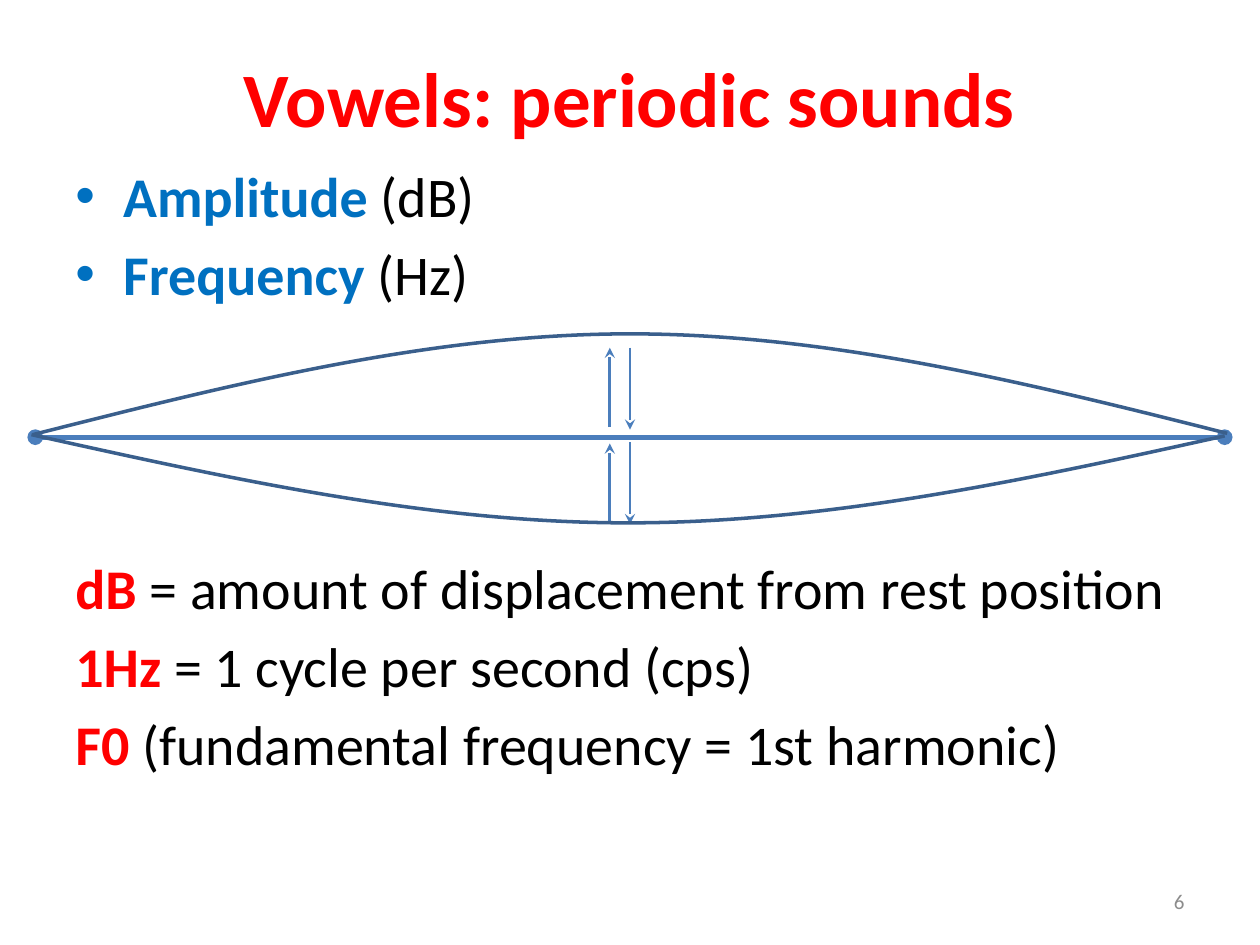
"""Build the slide on vowels as periodic sounds, with a vibrating string diagram."""
from lxml import etree
from pptx import Presentation, util as u
from pptx.dml.color import RGBColor
from pptx.enum import shapes, text
from pptx.oxml.ns import qn

RED, BLUE, BLACK, GREY = "FF0000", "0070C0", "000000", "8C8C8C"
STRING, CURVE = "4B7EBC", "3A5F8C"
TITLE = "Vowels: periodic sounds"
MEASURES = [("Amplitude ", "(dB)"), ("Frequency ", "(Hz)")]
DEFINITIONS = [
    ("dB", " = amount of displacement from rest position"),
    ("1Hz", " = 1 cycle per second (cps)"),
    ("F0 ", "(fundamental frequency = 1st harmonic)"),
]
REST = (0.28, 3.47, 9.72, 3.47)
ARROWS = [
    (4.84, 3.39, 4.84, 2.76),
    (5, 2.76, 5, 3.41),
    (4.84, 4.15, 4.84, 3.52),
    (5, 3.51, 5, 4.16),
]
CURVES = [
    (0.26, 9.74, [3.45, 3.05, 2.65, 2.65, 2.65, 3.04, 3.44]),
    (0.25, 9.72, [3.45, 3.8, 4.15, 4.15, 4.15, 3.81, 3.46]),
]


def rgb(color):
    return RGBColor.from_string(color)


def style(r, size, color, bold=False):
    r.font.name, r.font.size, r.font.bold = "Calibri", u.Pt(size), bold
    r.font.color.rgb = rgb(color)


def add_box(s, left, top, width, height):
    tf = s.shapes.add_textbox(*map(u.Inches, (left, top, width, height))).text_frame
    tf.word_wrap = True
    return tf


def add_terms(s, top, height, rows, color, bullet=False):
    tf = add_box(s, 0.5, top, 9, height)
    for i, (term, rest) in enumerate(rows):
        p = tf.add_paragraph() if i else tf.paragraphs[0]
        p.space_before = u.Pt(6.4)
        for words, c, bold in ((term, color, True), (rest, BLACK, False)):
            r = p.add_run()
            r.text = words
            style(r, 32, c, bold)
        if bullet:
            pPr = p._p.get_or_add_pPr()
            pPr.set("marL", str(u.Inches(0.38)))
            pPr.set("indent", str(-u.Inches(0.38)))
            etree.SubElement(pPr, qn("a:buFont"), typeface="Arial")
            etree.SubElement(pPr, qn("a:buChar"), char="•")


def add_line(s, ends, width, tail, head=None):
    c = s.shapes.add_connector(shapes.MSO_CONNECTOR.STRAIGHT, *map(u.Inches, ends))
    c.line.color.rgb, c.line.width = rgb(STRING), u.Pt(width)
    ln = c.line._get_or_add_ln()
    if head:
        etree.SubElement(ln, qn("a:headEnd"), type=head)
    etree.SubElement(ln, qn("a:tailEnd"), type=tail)
    etree.SubElement(c._element.spPr, qn("a:effectLst"))


def add_curve(s, left, right, ys):
    step = (right - left) / (len(ys) - 1)
    points = [(u.Inches(left + i * step), u.Inches(y)) for i, y in enumerate(ys)]
    fb = s.shapes.build_freeform(*points[0])
    fb.add_line_segments(points[1:], close=False)
    sp = fb.convert_to_shape()
    sp.shadow.inherit = False
    sp.fill.background()
    sp.line.color.rgb, sp.line.width = rgb(CURVE), u.Pt(2)
    segments = list(sp._element.iter(qn("a:lnTo")))
    outline = segments[0].getparent()
    for i in range(0, len(segments), 3):
        bez = etree.SubElement(outline, qn("a:cubicBezTo"))
        for seg in segments[i:i + 3]:
            bez.append(seg[0])
            outline.remove(seg)


def main():
    prs = Presentation()
    prs.slide_width, prs.slide_height = u.Inches(10), u.Inches(7.5)
    s = prs.slides.add_slide(prs.slide_layouts[5])
    title = s.shapes.title
    title.left, title.top = u.Inches(0.5), u.Inches(0.3)
    title.width, title.height = u.Inches(9), u.Inches(0.93)
    title.text_frame.text = TITLE
    style(title.text_frame.paragraphs[0].runs[0], 44, RED, True)

    add_terms(s, 1.23, 1.4, MEASURES, BLUE, bullet=True)
    add_terms(s, 4.34, 2.1, DEFINITIONS, RED)

    tf = add_box(s, 7.17, 6.95, 2.33, 0.4)
    tf.text = "6"
    tf.vertical_anchor = text.MSO_ANCHOR.MIDDLE
    tf.paragraphs[0].alignment = text.PP_ALIGN.RIGHT
    style(tf.paragraphs[0].runs[0], 12, GREY)

    add_line(s, REST, 3, "oval", "oval")
    for ends in ARROWS:
        add_line(s, ends, 1.5, "stealth")
    for curve in CURVES:
        add_curve(s, *curve)
    prs.save("out.pptx")


if __name__ == "__main__":
    main()
